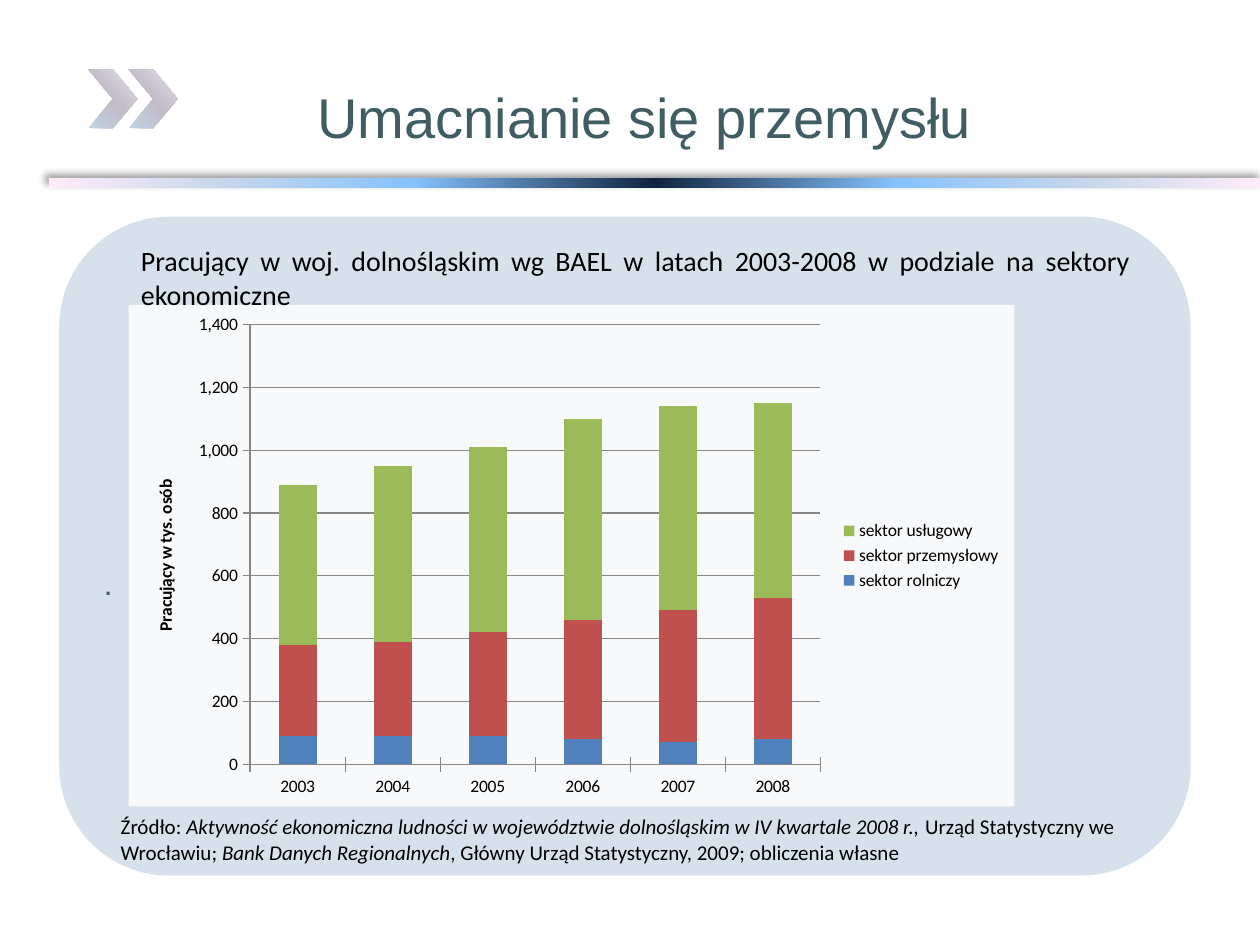
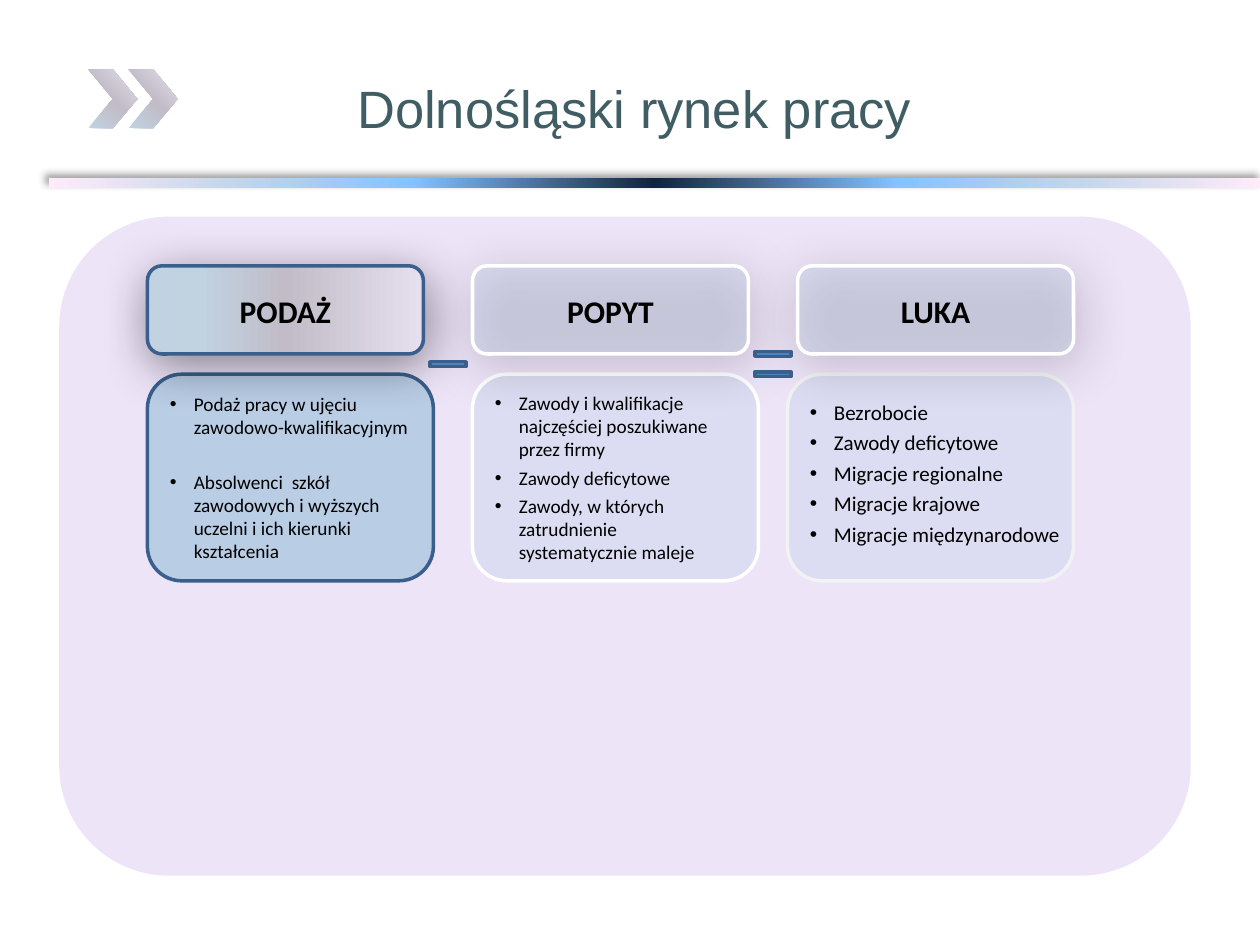
import dataclasses
import pptx
import pptx.chart.data
import pptx.dml.color
import pptx.enum.chart
import pptx.enum.shapes
import pptx.enum.text
import pptx.oxml
import pptx.oxml.ns
import pptx.util

Inches = pptx.util.Inches
Pt = pptx.util.Pt
Shape = pptx.enum.shapes.MSO_SHAPE
Align = pptx.enum.text.PP_ALIGN
Anchor = pptx.enum.text.MSO_ANCHOR
TickMark = pptx.enum.chart.XL_TICK_MARK


@dataclasses.dataclass(frozen=True)
class Theme:
    title_font: str = "Arial"
    body_font: str = "Calibri"
    title_color: str = "3F5D63"
    text: str = "000000"
    white: str = "FFFFFF"
    pale_line: str = "F2F2F2"
    blue_panel: str = "C1D2E1"
    violet_panel: str = "E5D7F5"
    card: str = "B9CDE5"
    sign: str = "4F81BD"
    outline: str = "3A5F8C"
    grid: str = "868686"
    band: tuple = ((0, "FFEBFA"), (15, "C4D6EB"), (30, "85C2FF"), (50, "0F243E"),
                   (70, "85C2FF"), (85, "C4D6EB"), (100, "FFEBFA"))
    mist: tuple = ((0, "C1D2E1"), (50, "C1BCC8"), (100, "E6DFED"))
    header_mist: tuple = ((19, "C1D2E1"), (50, "C1BCC8"), (100, "E6DFED"))
    band_shadow: tuple = (40, 4, 3, 225)
    header_shadow: tuple = (43, 28, 6, 75)
    panel_alpha: int = 66
    card_alpha: int = 31
    chart_alpha: int = 83
    header_size: int = 18
    lead_size: int = 16
    source_size: int = 12
    chart_size: int = 10
    line_width: int = 2


THEME = Theme()

INDUSTRY = {
    "title": ("Umacnianie się przemysłu", (1.25, 0.3, 7.73, 1.25), 32),
    "lead": "Pracujący w woj. dolnośląskim wg BAEL w latach 2003-2008 w podziale na sektory ekonomiczne",
    "dot": ".",
    "axis": "Pracujący w tys. osób",
    "years": ["2003", "2004", "2005", "2006", "2007", "2008"],
    "sectors": [
        ("sektor rolniczy", "4F81BD", [90, 90, 90, 80, 70, 80]),
        ("sektor przemysłowy", "C0504D", [290, 300, 330, 380, 420, 450]),
        ("sektor usługowy", "9BBB59", [510, 560, 590, 640, 650, 620]),
    ],
    "source": [
        ("Źródło: ", False),
        ("Aktywność ekonomiczna ludności w województwie dolnośląskim w IV kwartale 2008 r.,", True),
        (" Urząd Statystyczny we Wrocławiu; ", False),
        ("Bank Danych Regionalnych", True),
        (", Główny Urząd Statystyczny, 2009; obliczenia własne", False),
    ],
}

MARKET = {
    "title": ("Dolnośląski rynek pracy", (0.31, 0.23, 9.45, 1.25), 30),
    "columns": [
        {"name": "PODAŻ", "line": THEME.outline, "card_line": THEME.outline,
         "left": 1.17, "size": 11, "gap": 18, "items": [
             "Podaż pracy w ujęciu zawodowo-kwalifikacyjnym",
             "Absolwenci  szkół zawodowych i wyższych uczelni i ich kierunki kształcenia"]},
        {"name": "POPYT", "line": THEME.white, "card_line": THEME.white,
         "left": 3.75, "size": 11, "gap": 3, "items": [
             "Zawody i kwalifikacje najczęściej poszukiwane przez firmy",
             "Zawody deficytowe",
             "Zawody, w których zatrudnienie systematycznie maleje"]},
        {"name": "LUKA", "line": THEME.white, "card_line": THEME.pale_line,
         "left": 6.25, "size": 12, "gap": 3, "list_at": (6.33, 3.12, 2.27, 1.31), "items": [
             "Bezrobocie", "Zawody deficytowe", "Migracje regionalne",
             "Migracje krajowe", "Migracje międzynarodowe"]},
    ],
    "sign_tops": [[2.81], [2.73, 2.89]],
}


def rgb(code):
    return pptx.dml.color.RGBColor.from_string(code)


def apply(target, **values):
    for name, value in values.items():
        setattr(target, name, value)


def element(xml):
    namespace = pptx.oxml.ns.nsdecls("a", "c")
    return pptx.oxml.parse_xml(xml.replace(" NS", f" {namespace}", 1))


def solid(color, alpha):
    return f'<a:solidFill NS><a:srgbClr val="{color}"><a:alpha val="{alpha * 1000}"/></a:srgbClr></a:solidFill>'


def gradient(stops, angle):
    marks = "".join(f'<a:gs pos="{place * 1000}"><a:srgbClr val="{color}"/></a:gs>' for place, color in stops)
    return f'<a:gradFill NS><a:gsLst>{marks}</a:gsLst><a:lin ang="{angle * 60000}" scaled="0"/></a:gradFill>'


def add_shape(page, kind, area, fill, line=None, shadow=None):
    shape = page.shapes.add_shape(kind, *map(Inches, area))
    shape.shadow.inherit = False
    properties = shape._element.spPr
    properties.find(pptx.oxml.ns.qn("a:prstGeom")).addnext(element(fill))
    if line:
        shape.line.color.rgb = rgb(line)
        shape.line.width = Pt(THEME.line_width)
    else:
        shape.line.fill.background()
    if shadow:
        alpha, blur, distance, angle = shadow
        properties.find(pptx.oxml.ns.qn("a:effectLst")).append(element(
            f'<a:outerShdw NS blurRad="{Pt(blur)}" dist="{Pt(distance)}" dir="{angle * 60000}" '
            f'rotWithShape="0"><a:srgbClr val="000000"><a:alpha val="{alpha * 1000}"/></a:srgbClr></a:outerShdw>'))
    return shape


def add_box(page, area):
    return page.shapes.add_textbox(*map(Inches, area))


def write(box, paragraphs, size, align=Align.LEFT, anchor=Anchor.TOP,
          face=THEME.body_font, color=THEME.text, bold=False):
    frame = box.text_frame
    apply(frame, word_wrap=True, vertical_anchor=anchor)
    for index, spans in enumerate(paragraphs):
        para = frame.add_paragraph() if index else frame.paragraphs[0]
        para.alignment = align
        for words, italic in spans:
            span = para.add_run()
            span.text = words
            apply(span.font, name=face, size=Pt(size), bold=bold, italic=italic)
            span.font.color.rgb = rgb(color)
    return frame


def write_bullets(box, items, size, gap, anchor):
    frame = write(box, [[(item, False)] for item in items], size, anchor=anchor)
    for index, para in enumerate(frame.paragraphs):
        para.space_before = Pt(gap if index else 3)
        properties = para._p.get_or_add_pPr()
        properties.set("marL", str(Inches(0.19)))
        properties.set("indent", str(-Inches(0.19)))
        properties.append(element('<a:buFont NS typeface="Arial"/>'))
        properties.append(element('<a:buChar NS char="•"/>'))


def add_page(deck, title, panel_color):
    page = deck.slides.add_slide(deck.slide_layouts[6])
    add_shape(page, Shape.RECTANGLE, (0.39, 1.41, 9.61, 0.08), gradient(THEME.band, 0), shadow=THEME.band_shadow)
    for left in (1.02, 0.7):
        add_shape(page, Shape.CHEVRON, (left, 0.55, 0.39, 0.47), gradient(THEME.mist, 315))
    panel = add_shape(page, Shape.ROUNDED_RECTANGLE, (0.47, 1.72, 8.98, 5.23),
                      solid(panel_color, THEME.panel_alpha))
    words, area, size = title
    write(add_box(page, area), [[(words, False)]], size, Align.CENTER, Anchor.MIDDLE,
          THEME.title_font, THEME.title_color)
    return page, panel


def add_sector_chart(page):
    data = pptx.chart.data.CategoryChartData(number_format="#,##0")
    data.categories = INDUSTRY["years"]
    for name, _, values in INDUSTRY["sectors"]:
        data.add_series(name, values)
    chart = page.shapes.add_chart(pptx.enum.chart.XL_CHART_TYPE.COLUMN_STACKED,
                                  *map(Inches, (1.02, 2.42, 7.03, 3.98)), data).chart
    apply(chart, has_title=False, has_legend=True)
    apply(chart.font, name=THEME.body_font, size=Pt(THEME.chart_size))
    chart.font.color.rgb = rgb(THEME.text)
    apply(chart.legend, position=pptx.enum.chart.XL_LEGEND_POSITION.RIGHT, include_in_layout=False)
    plot = chart.plots[0]
    apply(plot, gap_width=150, overlap=100, vary_by_categories=False)
    for series, (_, color, _) in zip(plot.series, INDUSTRY["sectors"]):
        series.format.fill.solid()
        series.format.fill.fore_color.rgb = rgb(color)
    scale = chart.value_axis
    apply(scale, minimum_scale=0, maximum_scale=1400, major_unit=200, has_major_gridlines=True)
    apply(scale.tick_labels, number_format="#,##0", number_format_is_linked=False)
    for axis in (scale, chart.category_axis):
        apply(axis, major_tick_mark=TickMark.CROSS, minor_tick_mark=TickMark.NONE)
        axis.format.line.color.rgb = rgb(THEME.grid)
    scale.major_gridlines.format.line.color.rgb = rgb(THEME.grid)
    label = scale.axis_title.text_frame
    label.text = INDUSTRY["axis"]
    font = label.paragraphs[0].runs[0].font
    apply(font, name=THEME.body_font, size=Pt(THEME.chart_size), bold=True)
    font.color.rgb = rgb(THEME.text)
    back = element("<c:spPr NS><a:ln><a:noFill/></a:ln></c:spPr>")
    back.insert(0, element(solid(THEME.white, THEME.chart_alpha)))
    chart._chartSpace.find(pptx.oxml.ns.qn("c:chart")).addnext(back)


def build_industry(deck):
    page, panel = add_page(deck, INDUSTRY["title"], THEME.blue_panel)
    frame = write(panel, [[(INDUSTRY["dot"], False)]], 18, Align.JUSTIFY, Anchor.MIDDLE,
                  THEME.title_font, THEME.title_color)
    frame.margin_top = Inches(0.48)
    frame.paragraphs[0].line_spacing = 1.5
    add_sector_chart(page)
    write(add_box(page, (1.02, 1.88, 8.05, 0.64)), [[(INDUSTRY["lead"], False)]],
          THEME.lead_size, Align.JUSTIFY, Anchor.MIDDLE)
    write(add_box(page, (0.86, 6.41, 8.2, 0.51)), [INDUSTRY["source"]], THEME.source_size)


def build_market(deck):
    page, _ = add_page(deck, MARKET["title"], THEME.violet_panel)
    first, pitch, width = 1.17, 2.58, 2.19
    clear = solid(THEME.card, THEME.card_alpha)
    for index, column in enumerate(MARKET["columns"]):
        left = first + index * pitch
        card = add_shape(page, Shape.ROUNDED_RECTANGLE, (column["left"], 2.97, 2.27, 1.64),
                         clear if index else solid(THEME.card, 100), column["card_line"])
        add_shape(page, Shape.ROUNDED_RECTANGLE, (left, 2.11, width, 0.7),
                  clear if index else gradient(THEME.header_mist, 0), column["line"], THEME.header_shadow)
        write(add_box(page, (left, 2.27, width, 0.4)), [[(column["name"], False)]],
              THEME.header_size, Align.CENTER, bold=True)
        separate = "list_at" in column
        box = add_box(page, column["list_at"]) if separate else card
        write_bullets(box, column["items"], column["size"], column["gap"],
                      Anchor.TOP if separate else Anchor.MIDDLE)
    for index, tops in enumerate(MARKET["sign_tops"]):
        for top in tops:
            add_shape(page, Shape.MATH_MINUS, (first + index * pitch + width, top, pitch - width, 0.16),
                      solid(THEME.sign, 100), THEME.outline)


def main():
    deck = pptx.Presentation()
    apply(deck, slide_width=Inches(10), slide_height=Inches(7.5))
    build_industry(deck)
    build_market(deck)
    deck.save("out.pptx")


if __name__ == "__main__":
    main()
